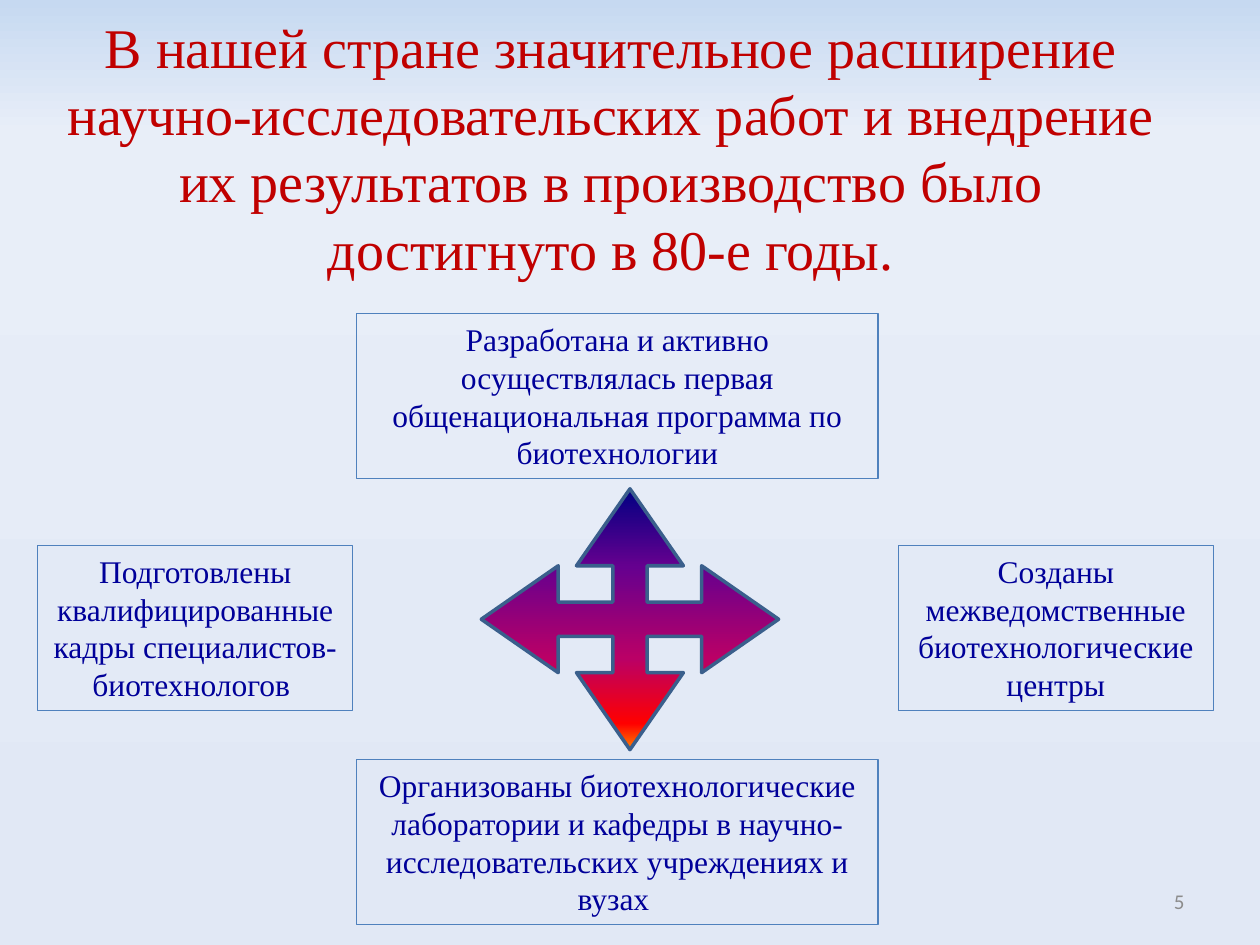
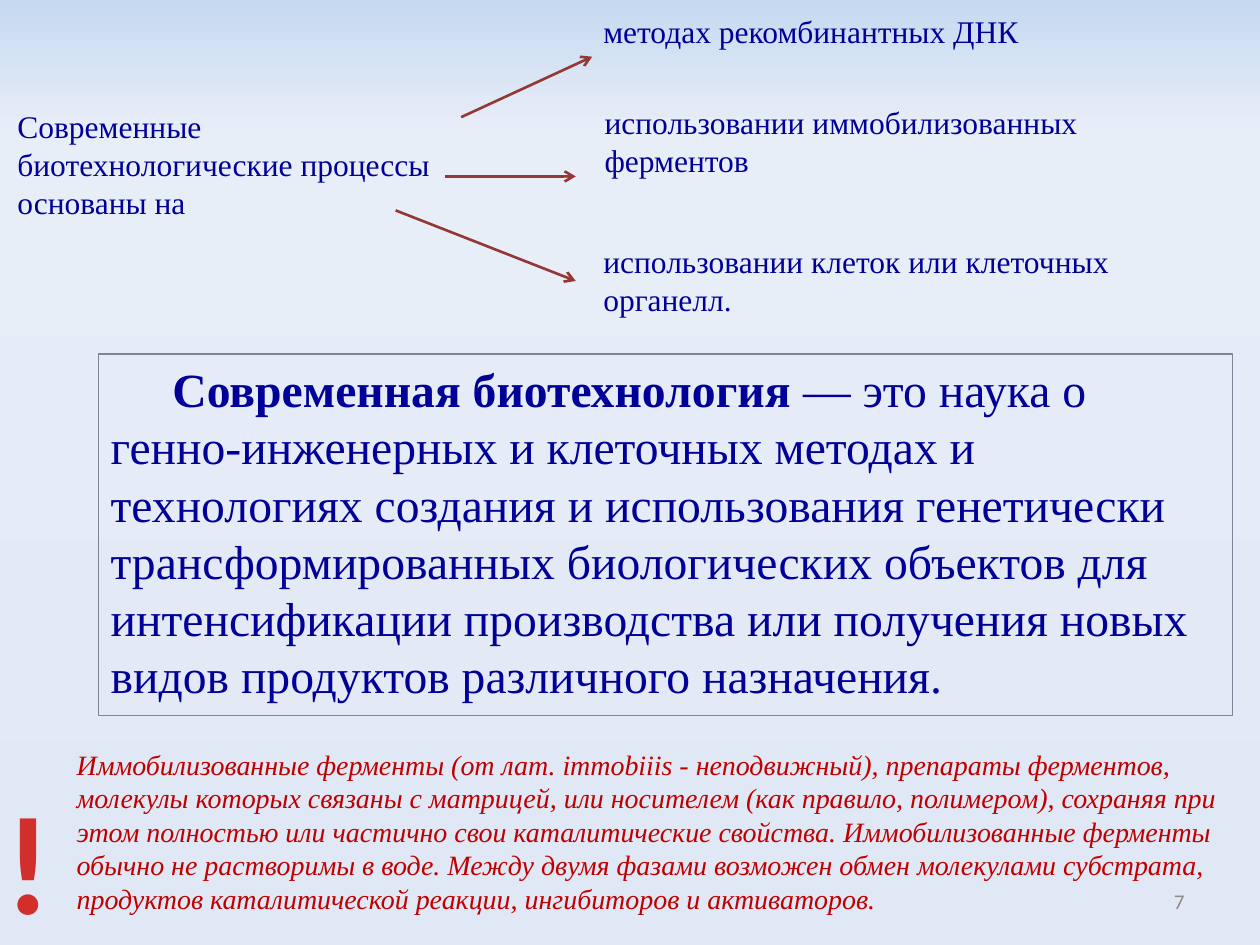
from dataclasses import dataclass

import pptx
import pptx.util
import pptx.dml.color
import pptx.enum.dml
import pptx.enum.shapes
import pptx.enum.text
import pptx.oxml
import pptx.oxml.ns
from lxml import etree

Inches = pptx.util.Inches
Pt = pptx.util.Pt
RGB = pptx.dml.color.RGBColor.from_string
ALIGN = pptx.enum.text.PP_ALIGN
SHAPE = pptx.enum.shapes.MSO_SHAPE
AUTO = pptx.enum.text.MSO_AUTO_SIZE
qn = pptx.oxml.ns.qn


@dataclass(frozen=True)
class Theme:
    serif: str = "Times New Roman"
    sans: str = "Calibri"
    red: str = "C00000"
    navy: str = "000099"
    grey: str = "8C8C8C"
    box_line: str = "4F81BD"
    definition_line: str = "7F8499"
    arrow_line: str = "953735"
    cross_line: str = "3A5F8C"
    title: float = 32
    definition: float = 27.2
    body: float = 18
    note: float = 16
    number: float = 12
    mark: float = 80
    background: tuple = ((0, "C6D9F1"), (14, "E8EEF8"), (100, "E1E8F5"))
    cross: tuple = ((0, "000082"), (30, "66008F"), (65, "BA0066"),
                    (90, "FF0000"), (100, "FF8200"))
    mark_fill: tuple = ((0, "FC7C7A"), (75, "D02F2C"), (100, "C70500"))


T = Theme()

# Text styles
BODY = {"name": T.serif, "size": Pt(T.body), "color": T.navy}
TITLE = {"name": T.serif, "size": Pt(T.title), "color": T.red}
DEFINITION = {"name": T.serif, "size": Pt(T.definition), "color": T.navy}
NOTE = {"name": T.serif, "size": Pt(T.note), "color": T.red, "italic": True}
NUMBER = {"name": T.sans, "size": Pt(T.number), "color": T.grey}
MARK = {"name": T.sans, "size": Pt(T.mark), "bold": True}


def set_gradient(fill, element, stops):
    """Fill from top to bottom with the given (percent, colour) stops."""
    fill.gradient()
    fill.gradient_angle = 270
    stop_list = element.find(".//" + qn("a:gsLst"))
    for old in list(stop_list):
        stop_list.remove(old)
    for percent, color in stops:
        stop = etree.SubElement(stop_list, qn("a:gs"), pos=str(percent * 1000))
        etree.SubElement(stop, qn("a:srgbClr"), val=color)


def set_line(line, color, width):
    line.color.rgb = RGB(color)
    line.width = Pt(width)


def write(sp, runs, align=ALIGN.LEFT, **frame):
    """Put (text, style) runs into one paragraph; frame holds text frame values."""
    tf = sp.text_frame
    values = {"word_wrap": True, "vertical_anchor": pptx.enum.text.MSO_ANCHOR.TOP}
    for name, value in (values | frame).items():
        setattr(tf, name, value)
    p = tf.paragraphs[0]
    p.alignment = align
    for text, style in runs:
        r = p.add_run()
        r.text = text
        for name, value in style.items():
            if name == "color":
                r.font.color.rgb = RGB(value)
            else:
                setattr(r.font, name, value)
    return p


def add_text(s, at, text, style, align=ALIGN.LEFT, **frame):
    sp = s.shapes.add_textbox(*map(Inches, at))
    write(sp, [(text, style)], align, **frame)
    return sp


def add_shape(s, kind, at, color, width):
    sp = s.shapes.add_shape(kind, *map(Inches, at))
    sp.shadow.inherit = False
    sp.fill.background()
    set_line(sp.line, color, width)
    return sp


def add_box(s, at, text):
    sp = add_shape(s, SHAPE.RECTANGLE, at, T.box_line, 0.75)
    write(sp, [(text, BODY)], ALIGN.CENTER, auto_size=AUTO.SHAPE_TO_FIT_TEXT)


def add_arrow(s, start, end):
    arrow = s.shapes.add_connector(pptx.enum.shapes.MSO_CONNECTOR.STRAIGHT,
                                   *map(Inches, start + end))
    set_line(arrow.line, T.arrow_line, 1.5)
    properties = arrow.element.spPr
    etree.SubElement(properties.find(qn("a:ln")), qn("a:tailEnd"), type="arrow")
    etree.SubElement(properties, qn("a:effectLst"))


def add_slide(prs):
    s = prs.slides.add_slide(prs.slide_layouts[6])
    set_gradient(s.background.fill, s.element, T.background)
    return s


def add_number(s, number):
    add_text(s, (7.17, 6.95, 2.33, 0.4), str(number), NUMBER, ALIGN.RIGHT,
             vertical_anchor=pptx.enum.text.MSO_ANCHOR.MIDDLE)


def build_achievements(prs):
    s = add_slide(prs)
    title = add_text(
        s, (0.35, 0.05, 9, 2.44),
        "В нашей стране значительное расширение научно-исследовательских работ "
        "и внедрение их результатов в производство было достигнуто в 80-е годы.",
        TITLE, ALIGN.CENTER)
    title.text_frame.paragraphs[0].space_before = Pt(3)

    # Four achievements around the cross
    wide, narrow, height = 4.14, 2.5, 1.31
    for left, top, width, text in (
        (2.83, 2.49, wide, "Разработана и активно осуществлялась первая "
                           "общенациональная программа по биотехнологии"),
        (7.13, 4.33, narrow, "Созданы межведомственные биотехнологические центры"),
        (0.3, 4.33, narrow, "Подготовлены квалифицированные кадры "
                            "специалистов-биотехнологов "),
        (2.83, 6.03, wide, "Организованы биотехнологические лаборатории и кафедры "
                           "в научно-исследовательских учреждениях и вузах "),
    ):
        add_box(s, (left, top, width, height), text)

    cross = add_shape(s, SHAPE.QUAD_ARROW, (3.82, 3.88, 2.36, 2.07), T.cross_line, 2)
    for i, value in enumerate((0.131, 0.205, 0.348)):
        cross.adjustments[i] = value
    set_gradient(cross.fill, cross.element, T.cross)
    add_number(s, 5)


def build_definition(prs):
    s = add_slide(prs)

    # Definition
    box = add_shape(s, SHAPE.RECTANGLE, (0.78, 2.81, 9, 2.87), T.definition_line, 0.75)
    p = write(box, [
        ("Современная биотехнология ", DEFINITION | {"bold": True}),
        ("— это наука о генно-инженерных и клеточных методах и технологиях создания "
         "и использования генетически трансформированных биологических объектов для "
         "интенсификации производства или получения новых видов продуктов "
         "различного назначения.", DEFINITION),
    ])
    p.space_before = Pt(3)
    p._p.get_or_add_pPr().set("indent", str(Inches(0.49)))

    # Processes and what they rest on; the left label stays clear of the arrows
    for at, text in (
        ((0.04, 0.8, 3.6, 1.01), "Современные биотехнологические процессы основаны на"),
        ((4.69, 0.05, 5, 0.4), "методах рекомбинантных ДНК"),
        ((4.7, 0.77, 5, 0.71), "использовании иммобилизованных ферментов"),
        ((4.69, 1.87, 5, 0.71), "использовании клеток или клеточных органелл."),
    ):
        add_text(s, at, text, BODY, auto_size=AUTO.SHAPE_TO_FIT_TEXT)
    for start, end in (
        ((3.66, 0.93), (4.7, 0.45)),
        ((3.53, 1.4), (4.57, 1.4)),
        ((3.14, 1.67), (4.57, 2.23)),
    ):
        add_arrow(s, start, end)

    # Note with its exclamation mark
    add_text(
        s, (0.51, 5.88, 9.41, 1.45),
        "Иммобилизованные ферменты (от лат. immobiiis - неподвижный), препараты "
        "ферментов, молекулы которых связаны с матрицей, или носителем (как правило, "
        "полимером), сохраняя при этом полностью или частично свои каталитические "
        "свойства. Иммобилизованные ферменты обычно не растворимы в воде. Между двумя "
        "фазами возможен обмен молекулами субстрата, продуктов каталитической реакции, "
        "ингибиторов и активаторов.", NOTE, auto_size=AUTO.SHAPE_TO_FIT_TEXT)
    mark = add_text(s, (-0.06, 6.1, 0.57, 1.45), "!", MARK, ALIGN.CENTER,
                    word_wrap=False, auto_size=AUTO.SHAPE_TO_FIT_TEXT)
    r = mark.text_frame.paragraphs[0].runs[0]
    set_gradient(r.font.fill, mark.element, T.mark_fill)
    add_number(s, 7)


def main():
    prs = pptx.Presentation()
    prs.slide_width = Inches(10)
    prs.slide_height = Inches(7.5)
    build_achievements(prs)
    build_definition(prs)
    prs.save("out.pptx")


if __name__ == "__main__":
    main()
